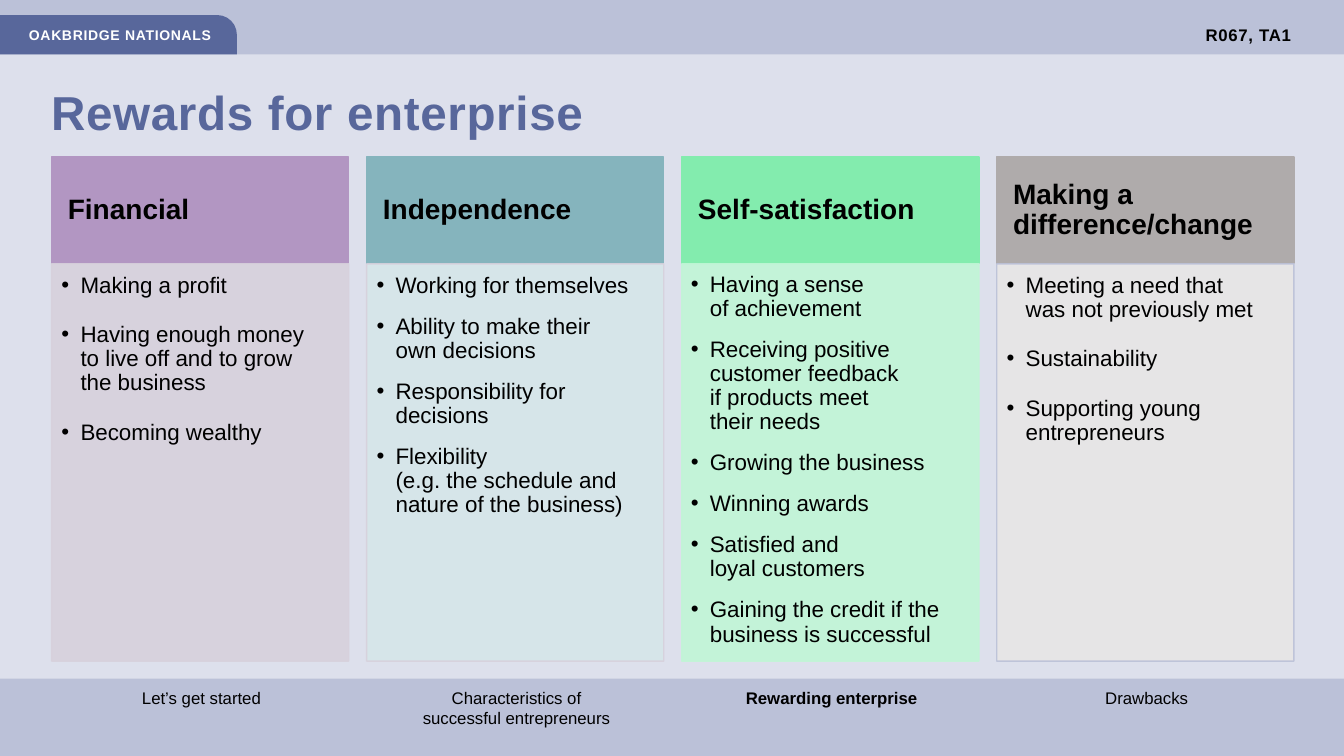
from copy import deepcopy
from lxml.etree import SubElement
from pptx import Presentation
from pptx.dml.color import RGBColor
from pptx.enum.shapes import MSO_SHAPE as Shape
from pptx.enum.text import MSO_ANCHOR as Anchor, PP_ALIGN as Align
from pptx.oxml.ns import qn
from pptx.util import Cm, Pt

BLACK = RGBColor(0, 0, 0)
WHITE = RGBColor(0xFF, 0xFF, 0xFF)
PALE = RGBColor(0xDD, 0xE0, 0xEC)
BAND = RGBColor(0xBB, 0xC1, 0xD8)
NAVY = RGBColor(0x58, 0x67, 0x9B)
PURPLE = RGBColor(0xB2, 0x96, 0xC2)
LILAC = RGBColor(0xD7, 0xD1, 0xDC)
TEAL = RGBColor(0x85, 0xB4, 0xBD)
ICE = RGBColor(0xD6, 0xE6, 0xE9)
GREEN = RGBColor(0x83, 0xEC, 0xAE)
MINT = RGBColor(0xC1, 0xF6, 0xD6)
GREY = RGBColor(0xAF, 0xAB, 0xAB)
SILVER = RGBColor(0xE7, 0xE6, 0xE6)

TITLE = "Rewards for enterprise"
COURSE = "OAKBRIDGE NATIONALS"
UNIT = "R067, TA1"
# heading, head colour, body colour, body outline, gap after points, points
CARDS = [
    ("Financial", PURPLE, LILAC, LILAC, 18, [
        "Making a profit",
        "Having enough money \nto live off and to grow \nthe business",
        "Becoming wealthy"]),
    ("Independence", TEAL, ICE, LILAC, 12, [
        "Working for themselves",
        "Ability to make their \nown decisions",
        "Responsibility for decisions",
        "Flexibility \n(e.g. the schedule and nature of the business)"]),
    ("Self-satisfaction", GREEN, MINT, MINT, 12, [
        "Having a sense \nof achievement",
        "Receiving positive customer feedback \nif products meet \ntheir needs",
        "Growing the business",
        "Winning awards",
        "Satisfied and \nloyal customers",
        "Gaining the credit if the business is successful"]),
    ("Making a difference/change", GREY, SILVER, BAND, 18, [
        "Meeting a need that \nwas not previously met",
        "Sustainability",
        "Supporting young entrepreneurs"]),
]
STEPS = ["Let’s get started", "Characteristics of successful entrepreneurs",
         "Rewarding enterprise", "Drawbacks"]
CURRENT = 2

LEFT, PITCH, WIDE = 1.3, 7.94, 7.49
HEAD_TOP, HEAD_HIGH = 3.96, 2.67
BODY_TOP, BODY_HIGH = 6.65, 10.01
STEP_LEFT, STEP_WIDE = 2.26, 5.51
HEAD_PAD = (0.41, 0.23, 0.41, 0.23)
BODY_PAD = (0.25, 0.25, 0.36, 0.41)
TIGHT_PAD = (0.23, 0.23, 0.3, 0.36)  # for the longest list
INDENT = 0.48

deck = Presentation()
deck.slide_width, deck.slide_height = Cm(33.87), Cm(19.05)
slide = deck.slides.add_slide(deck.slide_layouts[5])
slide.background.fill.solid()
slide.background.fill.fore_color.rgb = PALE


def write(shape, text, size=12, color=BLACK, bold=False, align=Align.LEFT,
          anchor=Anchor.TOP, pad=(0.25, 0.13, 0.25, 0.13), line=1.0, after=0,
          track=0, indent=0, bullet=False):
    """Fill a shape with one paragraph, or with a list of them."""
    frame = shape.text_frame
    frame.word_wrap, frame.vertical_anchor = True, anchor
    (frame.margin_left, frame.margin_top,
     frame.margin_right, frame.margin_bottom) = map(Cm, pad)
    for i, words in enumerate([text] if isinstance(text, str) else text):
        para = frame.add_paragraph() if i else frame.paragraphs[0]
        para.text = words.replace("\n", "\v")
        para.alignment, para.line_spacing = align, line
        para.space_before, para.space_after = Pt(0), Pt(after)
        for run in para.runs:
            font = run.font
            font.name, font.size, font.bold = "Arial", Pt(size), bold
            font.color.rgb = color
            if track:
                run._r.get_or_add_rPr().set("spc", str(track))
        for brk in para._p.findall(qn("a:br")):
            brk.append(deepcopy(para.runs[0]._r.rPr))
        props = para._p.get_or_add_pPr()
        if indent:
            props.set("marL", str(Cm(indent)))
        if bullet:
            props.set("indent", str(-Cm(indent)))
            SubElement(props, qn("a:buFont")).set("typeface", "Arial")
            SubElement(props, qn("a:buChar")).set("char", "•")


def block(x, y, w, h, fill, edge=None, alpha=None, kind=Shape.RECTANGLE):
    shape = slide.shapes.add_shape(kind, Cm(x), Cm(y), Cm(w), Cm(h))
    shape.shadow.inherit = False
    shape.fill.solid()
    shape.fill.fore_color.rgb = fill
    if edge is None:
        shape.line.fill.background()
    else:
        shape.line.color.rgb = edge
        shape.line.width = Pt(1)
    if alpha:
        for tint in shape._element.spPr.iter(qn("a:srgbClr")):
            SubElement(tint, qn("a:alpha")).set("val", str(alpha * 1000))
    return shape


def label(x, y, w, h, text, **style):
    write(slide.shapes.add_textbox(Cm(x), Cm(y), Cm(w), Cm(h)), text, **style)


block(0, 0, 33.87, 1.37, BAND)
block(0, 17.1, 33.87, 1.95, BAND)
tab = block(0, 0.38, 5.97, 0.99, NAVY, kind=Shape.ROUND_1_RECTANGLE)
tab.adjustments[0] = 0.5
label(0, 0.38, 6.6, 0.99, COURSE, size=10, color=WHITE, bold=True,
      anchor=Anchor.MIDDLE, track=50, indent=0.48)
label(26.19, 0.38, 6.6, 0.99, UNIT, bold=True, align=Align.RIGHT,
      anchor=Anchor.MIDDLE, track=50)

title = slide.shapes.title
title.left, title.top, title.width, title.height = map(Cm, (1.04, 1.63, 31.4, 2.2))
write(title, TITLE, size=34, color=NAVY, bold=True, anchor=Anchor.MIDDLE,
      line=1.1, track=50)

for i, (name, dark, light, edge, gap, points) in enumerate(CARDS):
    x = LEFT + i * PITCH
    head = block(x, HEAD_TOP, WIDE, HEAD_HIGH, dark, dark)
    write(head, name, size=20, bold=True, anchor=Anchor.MIDDLE, pad=HEAD_PAD,
          line=0.9)
    body = block(x, BODY_TOP, WIDE, BODY_HIGH, light, edge, alpha=90)
    write(body, points, size=16, pad=TIGHT_PAD if len(points) > 5 else BODY_PAD,
          line=0.9, after=gap, indent=INDENT, bullet=True)

for i, step in enumerate(STEPS):
    label(STEP_LEFT + i * PITCH, 17.2, STEP_WIDE, 0.76, step, indent=0.13,
          bold=i == CURRENT, align=Align.CENTER)

deck.save("out.pptx")
